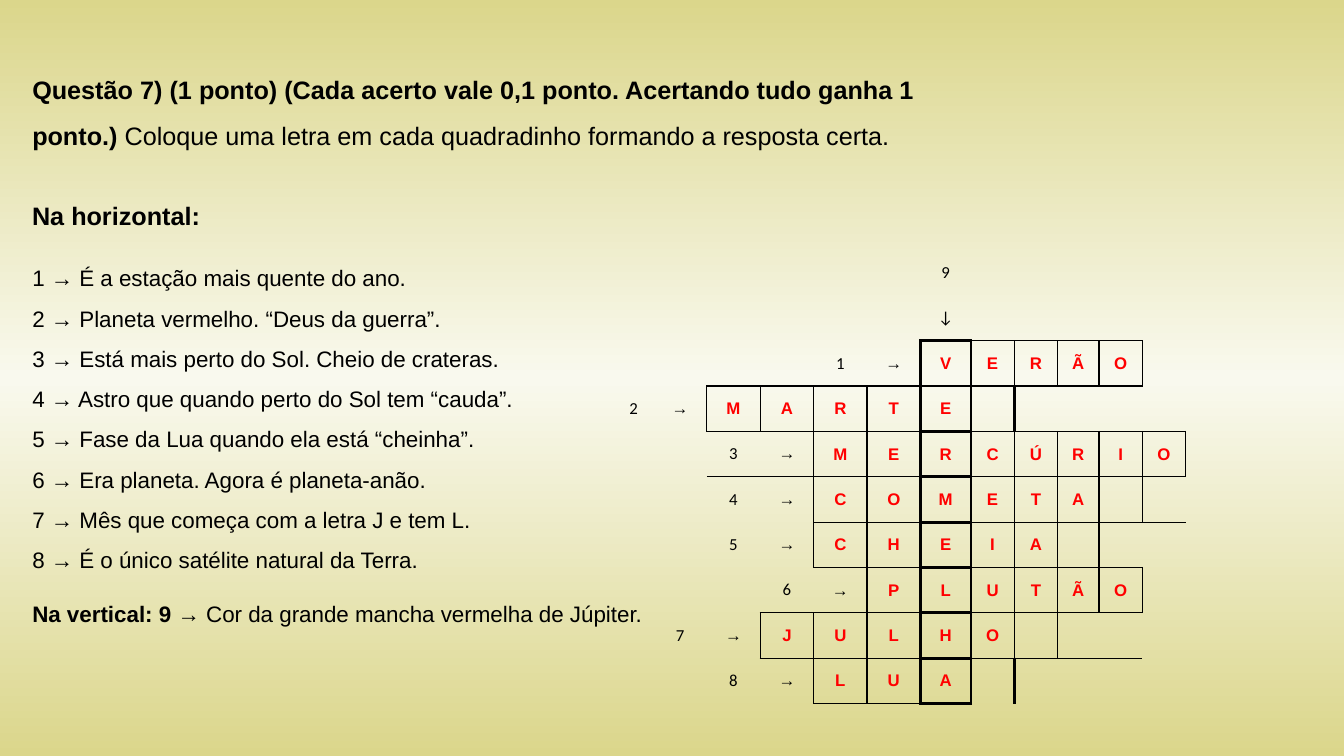
from collections import defaultdict
from copy import deepcopy

from lxml.etree import SubElement
from pptx import Presentation
from pptx.dml.color import RGBColor
from pptx.enum.text import MSO_ANCHOR, MSO_AUTO_SIZE, PP_ALIGN
from pptx.oxml.ns import qn
from pptx.util import Inches, Pt

SLIDE_WIDTH, SLIDE_HEIGHT = 13.33, 7.5
BLACK, RED, OLIVE, CREAM = "000000", "FF0000", "DBD68B", "F9F9EE"

GRID_LEFT, GRID_TOP = 6.09, 2.48
COLUMN_WIDTHS = [0.39] + [0.53] * 5 + [0.5, 0.43, 0.43, 0.41, 0.43, 0.43]
ROW_HEIGHT, ROW_COUNT = 0.45, 10
FIRST_WORD_ROW, VERTICAL_COLUMN = 2, 6
THIN, THICK = 1, 2.25
LETTER_SIZE, LETTER_DROP = 0.3, 0.07
NO_GRID_STYLE = "{2D5ABB26-0587-4C30-8999-92F81FD0307C}"

# Each answer with the column of its first letter
ANSWERS = [("VERÃO", 6), ("MARTE", 2), ("MERCÚRIO", 4), ("COMETA", 4),
           ("CHEIA", 4), ("PLUTÃO", 5), ("JULHO", 3), ("LUA", 4)]

QUESTION = [("Questão 7) (1 ponto) (Cada acerto vale 0,1 ponto. Acertando tudo ganha 1 ponto.) ", True),
            ("Coloque uma letra em cada quadradinho formando a resposta certa.", False)]
CLUES = ["É a estação mais quente do ano.",
         "Planeta vermelho. “Deus da guerra”.",
         "Está mais perto do Sol. Cheio de crateras.",
         "Astro que quando perto do Sol tem “cauda”.",
         "Fase da Lua quando ela está “cheinha”.",
         "Era planeta. Agora é planeta-anão.",
         "Mês que começa com a letra J e tem L.",
         "É o único satélite natural da Terra."]
VERTICAL_CLUE = [("Na vertical: 9 ", True),
                 ("→ Cor da grande mancha vermelha de Júpiter.", False)]


def color(hex_value):
    return RGBColor.from_string(hex_value)


def share(left, top, width, height):
    """Turn percentages of the slide into lengths."""
    return [Inches(part * side / 100) for part, side in
            zip((left, top, width, height), (SLIDE_WIDTH, SLIDE_HEIGHT) * 2)]


def place(shape, box):
    shape.left, shape.top, shape.width, shape.height = box


def set_up_frame(shape):
    frame = shape.text_frame
    frame.word_wrap = True
    frame.auto_size = MSO_AUTO_SIZE.SHAPE_TO_FIT_TEXT
    frame.vertical_anchor = MSO_ANCHOR.TOP
    return frame


def write(paragraph, parts, size, alignment, line_spacing=1.0, space_before=0,
          font_name="Arial", hex_value=BLACK):
    """Fill a paragraph with (text, bold) parts."""
    paragraph.alignment = alignment
    paragraph.line_spacing = line_spacing
    paragraph.space_before = Pt(space_before)
    for text, bold in parts:
        run = paragraph.add_run()
        run.text = text
        run.font.name = font_name
        run.font.size = Pt(size)
        run.font.bold = bold
        run.font.color.rgb = color(hex_value)


def remove_bullet(paragraph):
    properties = paragraph._p.get_or_add_pPr()
    properties.set("marL", "0")
    properties.set("indent", "0")
    SubElement(properties, qn("a:buNone"))


def paint_background(slide):
    fill = slide.background.fill
    fill.gradient()
    fill.gradient_angle = 270
    stop_list = next(slide.element.iter(qn("a:gsLst")))
    stop_list.append(deepcopy(stop_list[-1]))
    for stop, position, hex_value in zip(fill.gradient_stops, (0, 0.5, 1), (OLIVE, CREAM, OLIVE)):
        stop.position = position
        stop.color.rgb = color(hex_value)


def add_clues(body):
    place(body, share(1.65, 32.53, 47.19, 51.6))
    frame = set_up_frame(body)
    for number, clue in enumerate(CLUES, 1):
        paragraph = frame.paragraphs[0] if number == 1 else frame.add_paragraph()
        remove_bullet(paragraph)
        write(paragraph, [(f"{number} → {clue}", False)], 16, PP_ALIGN.JUSTIFY, 1.5)
    paragraph = frame.add_paragraph()
    remove_bullet(paragraph)
    write(paragraph, VERTICAL_CLUE, 16, PP_ALIGN.LEFT, space_before=19)


def letter_cells():
    """Yield row, column and letter of every square."""
    for row, (word, start) in enumerate(ANSWERS, FIRST_WORD_ROW):
        for column, letter in enumerate(word, start):
            yield row, column, letter


def square_borders():
    """Map each cell to its border widths, shared with the neighbouring cells."""
    borders = defaultdict(dict)
    # The vertical word comes last so that its thick edges win
    for row, column, _ in sorted(letter_cells(), key=lambda cell: cell[1] == VERTICAL_COLUMN):
        width = THICK if column == VERTICAL_COLUMN else THIN
        for side, facing, row_step, column_step in (("L", "R", 0, -1), ("R", "L", 0, 1),
                                                    ("T", "B", -1, 0), ("B", "T", 1, 0)):
            borders[row, column][side] = width
            borders[row + row_step, column + column_step][facing] = width
    return borders


def draw_borders(cell, widths):
    properties = cell._tc.get_or_add_tcPr()
    for side in "LRTB":
        if side in widths:
            line = SubElement(properties, qn(f"a:ln{side}"), w=str(Pt(widths[side])))
            fill = SubElement(line, qn("a:solidFill"))
            SubElement(fill, qn("a:srgbClr"), val=BLACK)


def label(cell, text, font_name="Calibri"):
    write(cell.text_frame.paragraphs[0], [(text, False)], 12, PP_ALIGN.CENTER, font_name=font_name)


def add_crossword(slide):
    frame = slide.shapes.add_table(ROW_COUNT, len(COLUMN_WIDTHS), Inches(GRID_LEFT), Inches(GRID_TOP),
                                   Inches(sum(COLUMN_WIDTHS)), Inches(ROW_HEIGHT * ROW_COUNT))
    table = frame.table
    table.first_row = table.horz_banding = False
    next(table._tbl.iter(qn("a:tableStyleId"))).text = NO_GRID_STYLE
    for column, width in zip(table.columns, COLUMN_WIDTHS):
        column.width = Inches(width)
    borders = square_borders()
    for row in range(ROW_COUNT):
        table.rows[row].height = Inches(ROW_HEIGHT)
        for column in range(len(COLUMN_WIDTHS)):
            cell = table.cell(row, column)
            draw_borders(cell, borders[row, column])
            cell.fill.background()
            cell.vertical_anchor = MSO_ANCHOR.MIDDLE
            cell.margin_left = cell.margin_right = Inches(0.07)
            cell.margin_top = cell.margin_bottom = 0
    label(table.cell(0, VERTICAL_COLUMN), "9")
    label(table.cell(1, VERTICAL_COLUMN), "↓")
    for number, (_, start) in enumerate(ANSWERS, 1):
        row = FIRST_WORD_ROW + number - 1
        label(table.cell(row, start - 2), str(number))
        label(table.cell(row, start - 1), "→", "Arial")


def add_letter(slide, row, column, letter):
    center = GRID_LEFT + sum(COLUMN_WIDTHS[:column]) + COLUMN_WIDTHS[column] / 2
    top = GRID_TOP + row * ROW_HEIGHT + LETTER_DROP
    box = slide.shapes.add_textbox(Inches(center - LETTER_SIZE / 2), Inches(top),
                                   Inches(LETTER_SIZE), Inches(LETTER_SIZE))
    frame = set_up_frame(box)
    frame.margin_left = frame.margin_right = 0
    write(frame.paragraphs[0], [(letter, True)], 12, PP_ALIGN.CENTER, hex_value=RED)


def main():
    presentation = Presentation()
    presentation.slide_width = Inches(SLIDE_WIDTH)
    presentation.slide_height = Inches(SLIDE_HEIGHT)
    slide = presentation.slides.add_slide(presentation.slide_layouts[1])
    paint_background(slide)

    title = slide.shapes.title
    place(title, share(1.65, 7.2, 67.14, 12.8))
    write(set_up_frame(title).paragraphs[0], QUESTION, 18, PP_ALIGN.JUSTIFY, 1.5)

    add_crossword(slide)
    heading = slide.shapes.add_textbox(*share(1.65, 25.87, 15.15, 5.33))
    write(set_up_frame(heading).paragraphs[0], [("Na horizontal:", True)], 18, PP_ALIGN.LEFT)
    add_clues(slide.placeholders[1])
    for row, column, letter in letter_cells():
        add_letter(slide, row, column, letter)

    presentation.save("out.pptx")


if __name__ == "__main__":
    main()
